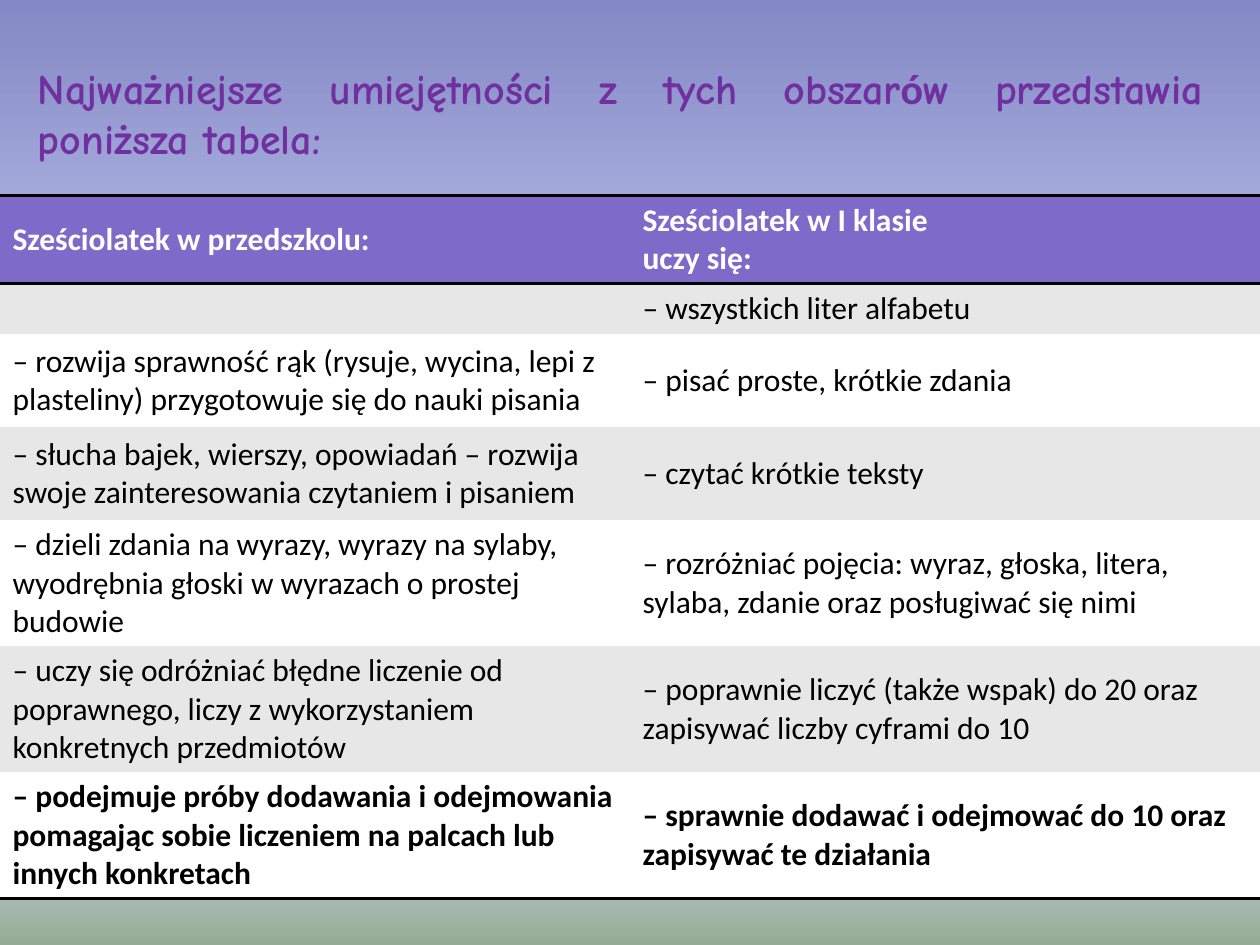
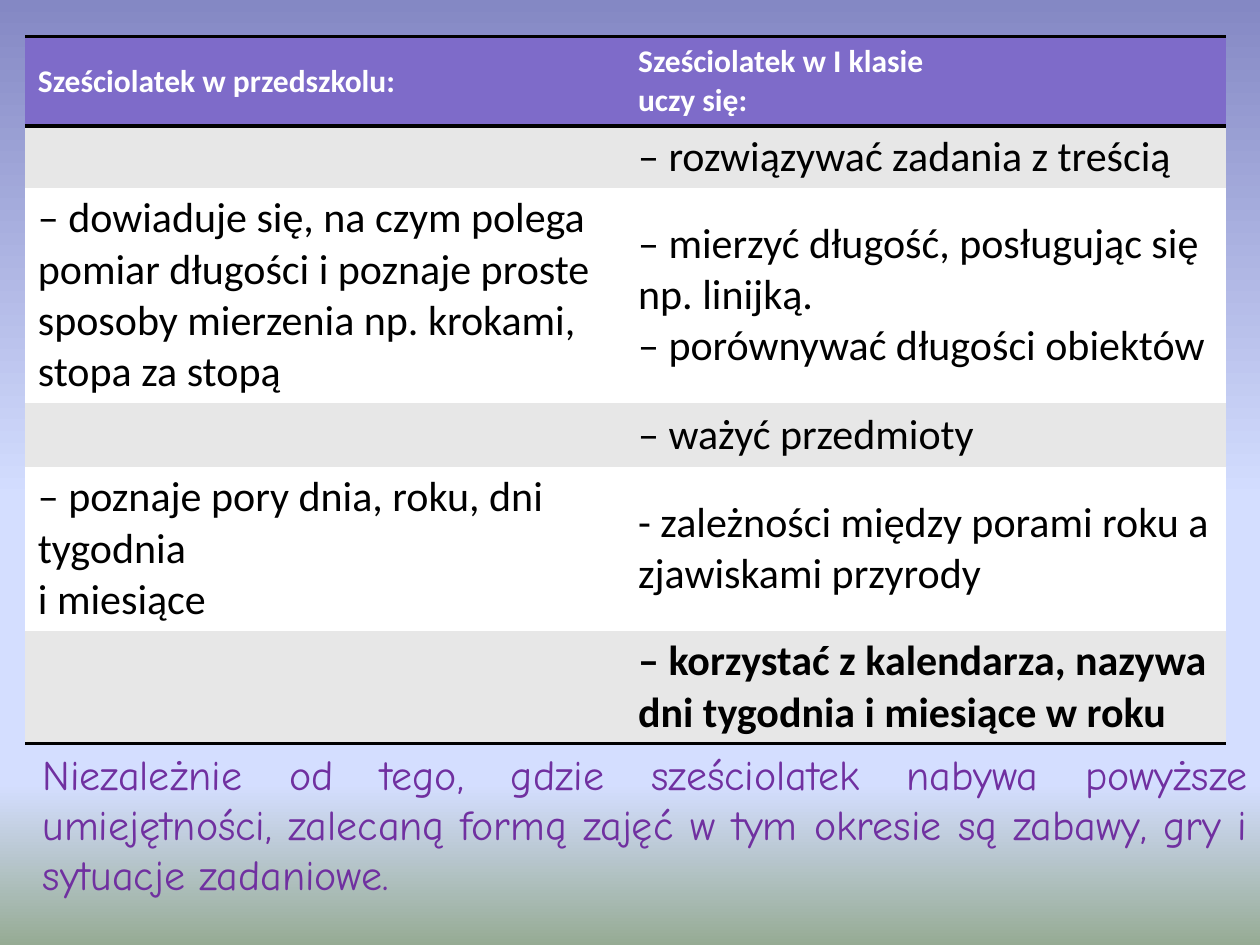
"""Build two slides comparing the skills of six-year-olds in preschool and in first grade."""
from copy import deepcopy
from dataclasses import dataclass

from lxml.etree import SubElement
from pptx import Presentation
from pptx.dml.color import RGBColor
from pptx.enum.text import MSO_ANCHOR, MSO_AUTO_SIZE, PP_ALIGN
from pptx.oxml.ns import qn
from pptx.util import Cm, Pt


@dataclass(frozen=True)
class Theme:
    sky: tuple = ((0, "8488C4"), (0.53, "D4DEFF"), (0.83, "D4DEFF"), (1, "96AB94"))
    accent: str = "7030A0"
    header: str = "7E6BC9"
    bands: tuple = ("E7E7E7", "FFFFFF")
    ink: str = "000000"
    white: str = "FFFFFF"
    display_font: str = "Comic Neue"
    text_font: str = "Calibri"
    small: int = 18
    large: int = 24
    rule: int = 2


theme = Theme()


def add_run(p, text, font, size, color, bold=False):
    for i, line in enumerate(text.split("\n")):
        if i:
            p.add_line_break()
        r = p.add_run()
        r.text = line
        r.font.name = font
        r.font.size = Pt(size)
        r.font.bold = bold
        r.font.color.rgb = RGBColor.from_string(color)


def add_rule(cell, tag):
    ln = SubElement(cell._tc.get_or_add_tcPr(), qn(tag), w=str(Pt(theme.rule)))
    SubElement(SubElement(ln, qn("a:solidFill")), qn("a:srgbClr"), val=theme.ink)


header = ("Sześciolatek w przedszkolu:", "Sześciolatek w I klasie\nuczy się:")
reading_rows = [
    (1.78, *header),
    (1.01, "", "– wszystkich liter alfabetu"),
    (1.88, "– rozwija sprawność rąk (rysuje, wycina, lepi z plasteliny) "
     "przygotowuje się do nauki pisania", "– pisać proste, krótkie zdania"),
    (1.88, "– słucha bajek, wierszy, opowiadań – rozwija swoje zainteresowania "
     "czytaniem i pisaniem", "– czytać krótkie teksty"),
    (2.54, "– dzieli zdania na wyrazy, wyrazy na sylaby, wyodrębnia głoski "
     "w wyrazach o prostej budowie",
     "– rozróżniać pojęcia: wyraz, głoska, litera, sylaba, zdanie oraz posługiwać się nimi"),
    (2.54, "– uczy się odróżniać błędne liczenie od poprawnego, liczy "
     "z wykorzystaniem konkretnych przedmiotów",
     "– poprawnie liczyć (także wspak) do 20 oraz zapisywać liczby cyframi do 10"),
    (2.54, "– podejmuje próby dodawania i odejmowania pomagając sobie liczeniem "
     "na palcach lub innych konkretach",
     "– sprawnie dodawać i odejmować do 10 oraz zapisywać te działania"),
]
measuring_rows = [
    (1.8, *header),
    (1.25, "", "– rozwiązywać zadania z treścią"),
    (4.32, "– dowiaduje się, na czym polega pomiar długości i poznaje proste "
     "sposoby mierzenia np. krokami, stopa za stopą",
     "– mierzyć długość, posługując się np. linijką.\n– porównywać długości obiektów"),
    (1.29, "", "– ważyć przedmioty"),
    (3.28, "– poznaje pory dnia, roku, dni tygodnia\ni miesiące",
     "- zależności między porami roku a zjawiskami przyrody"),
    (2.28, "", "– korzystać z kalendarza, nazywa dni tygodnia i miesiące w roku"),
]

prs = Presentation()
prs.slide_width, prs.slide_height = Cm(25.4), Cm(19.05)

fill = prs.slide_master.background.fill
fill.gradient()
fill.gradient_angle = 270
stops = prs.slide_master.element.find(".//" + qn("a:gsLst"))
while len(stops) < len(theme.sky):
    stops.append(deepcopy(stops[0]))
for stop, (position, color) in zip(fill.gradient_stops, theme.sky):
    stop.position = position
    stop.color.rgb = RGBColor.from_string(color)

reading = prs.slides.add_slide(prs.slide_layouts[5])
measuring = prs.slides.add_slide(prs.slide_layouts[6])

title = reading.shapes.title
title.left, title.top, title.width, title.height = Cm(0.51), Cm(1.12), Cm(24), Cm(2.31)
closing = measuring.shapes.add_textbox(Cm(0.61), Cm(14.94), Cm(24.79), Cm(3.33))
messages = [
    (title, True, [("Najważniejsze umiejętności z tych obszar", theme.display_font),
                   ("ó", theme.text_font),
                   ("w przedstawia poniższa tabela:", theme.display_font)]),
    (closing, False, [("Niezależnie od tego, gdzie sześciolatek nabywa powyższe umiejętności, "
                       "zalecaną formą zajęć w tym okresie są zabawy, gry i sytuacje zadaniowe.",
                       theme.display_font)]),
]
for sp, bold, runs in messages:
    tf = sp.text_frame
    tf.word_wrap = True
    tf.auto_size = MSO_AUTO_SIZE.NONE
    tf.vertical_anchor = MSO_ANCHOR.MIDDLE
    p = tf.paragraphs[0]
    p.alignment = PP_ALIGN.JUSTIFY
    for text, font in runs:
        add_run(p, text, font, theme.large, theme.accent, bold)

tables = [
    (reading, reading_rows, 0, 3.94, 12.7, theme.small),
    (measuring, measuring_rows, 0.51, 0.74, 12.1, theme.large),
]
for s, rows, left, top, column_width, body_size in tables:
    height = sum(row[0] for row in rows)
    table = s.shapes.add_table(len(rows), len(header), Cm(left), Cm(top),
                               Cm(column_width * len(header)), Cm(height)).table
    table.horz_banding = False
    table._tbl.tblPr.find(qn("a:tableStyleId")).text = "{2D5ABB26-0587-4C30-8999-92F81FD0307C}"
    for column in table.columns:
        column.width = Cm(column_width)
    last = len(rows) - 1
    for i, (row_height, *texts) in enumerate(rows):
        table.rows[i].height = Cm(row_height)
        is_header = i == 0
        for cell, text in zip(table.rows[i].cells, texts):
            if is_header:
                add_rule(cell, "a:lnT")
            if i in (0, last):
                add_rule(cell, "a:lnB")
            cell.fill.solid()
            band = theme.header if is_header else theme.bands[(i - 1) % 2]
            cell.fill.fore_color.rgb = RGBColor.from_string(band)
            cell.vertical_anchor = MSO_ANCHOR.MIDDLE
            cell.margin_top = cell.margin_bottom = Cm(0.1)
            if text:
                add_run(cell.text_frame.paragraphs[0], text, theme.text_font,
                        theme.small if is_header else body_size,
                        theme.white if is_header else theme.ink, i in (0, last))

prs.save("out.pptx")
